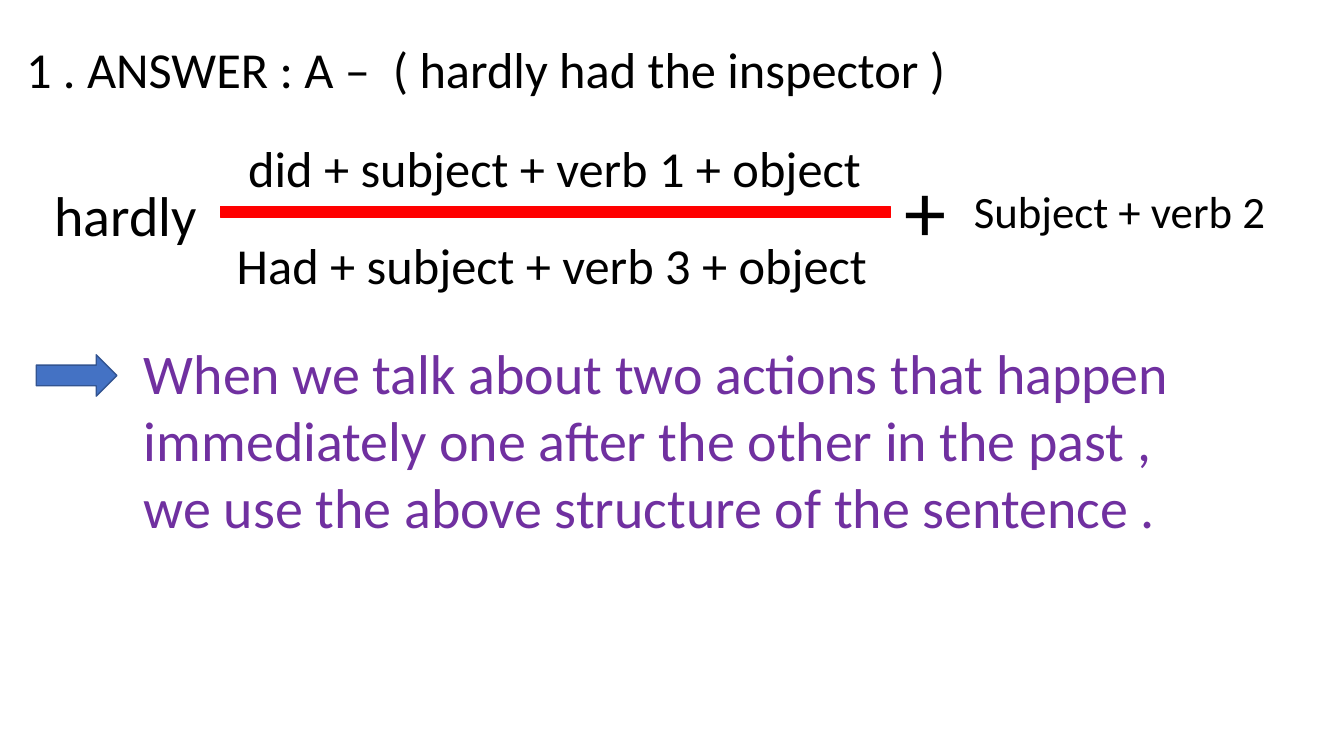
from pptx import Presentation
from pptx.dml.color import RGBColor
from pptx.enum import shapes, text
from pptx.util import Inches, Pt

BLACK = RGBColor(0x00, 0x00, 0x00)
RED = RGBColor(0xFF, 0x00, 0x00)
PURPLE = RGBColor(0x70, 0x30, 0xA0)
BLUE = RGBColor(0x44, 0x72, 0xC4)
DARK_BLUE = RGBColor(0x32, 0x54, 0x91)
WIDTH, HEIGHT = 13.33, 7.5


def add_words(slide, box, words, size, color=BLACK, wrap=True, inset=0.1):
    label = slide.shapes.add_textbox(*map(Inches, box))
    frame = label.text_frame
    frame.text = words
    frame.word_wrap = wrap
    frame.auto_size = text.MSO_AUTO_SIZE.SHAPE_TO_FIT_TEXT
    frame.margin_left = frame.margin_right = Inches(inset)
    font = frame.paragraphs[0].runs[0].font
    font.name, font.size, font.color.rgb = "Calibri", Pt(size), color


def add_block(slide, kind, box, fill, outline):
    block = slide.shapes.add_shape(kind, *map(Inches, box))
    block.shadow.inherit = False
    block.fill.solid()
    block.fill.fore_color.rgb = fill
    block.line.color.rgb = outline
    block.line.width = Pt(1)


def add_answer(slide, box):
    add_words(slide, box, "1 . ANSWER : A –  ( hardly had the inspector )", 36, wrap=False)


def add_formula(slide, box):
    left, top, width, height = box
    bar_left, bar_width = left + 1.75, 6.64
    add_words(slide, (bar_left + 0.06, top, bar_width + 0.13, 0.71),
              " did + subject + verb 1 + object", 36)
    add_words(slide, (bar_left + 0.06, top + height - 0.71, bar_width, 0.71),
              "Had + subject + verb 3 + object", 36)
    add_block(slide, shapes.MSO_SHAPE.RECTANGLE,
              (bar_left, top + 0.74, bar_width, 0.11), RED, RED)
    add_words(slide, (left, top + 0.43, 1.63, 0.77), "hardly", 40, wrap=False)
    add_words(slide, (bar_left + bar_width + 0.14, top + 0.21, 0.41, 1.11),
              "+", 60, wrap=False, inset=0)
    add_words(slide, (left + width - 3.22, top + 0.46, 3.22, 0.64),
              "Subject + verb 2", 32)


def add_explanation(slide, box):
    left, top, width, height = box
    indent = 0.97
    add_words(slide, (left + indent, top, width - indent, height),
              "When we talk about two actions that happen immediately one after "
              "the other in the past , we use the above structure of the sentence .",
              40, PURPLE)
    add_block(slide, shapes.MSO_SHAPE.RIGHT_ARROW,
              (left, top + 0.21, 0.8, 0.41), BLUE, DARK_BLUE)


def main():
    deck = Presentation()
    deck.slide_width, deck.slide_height = Inches(WIDTH), Inches(HEIGHT)
    slide = deck.slides.add_slide(deck.slide_layouts[6])
    add_answer(slide, (0.16, 0.33, 9.4, 0.71))
    add_formula(slide, (0.44, 1.31, 12.34, 1.67))
    add_explanation(slide, (0.36, 3.31, 11.74, 2.12))
    deck.save("out.pptx")


if __name__ == "__main__":
    main()
